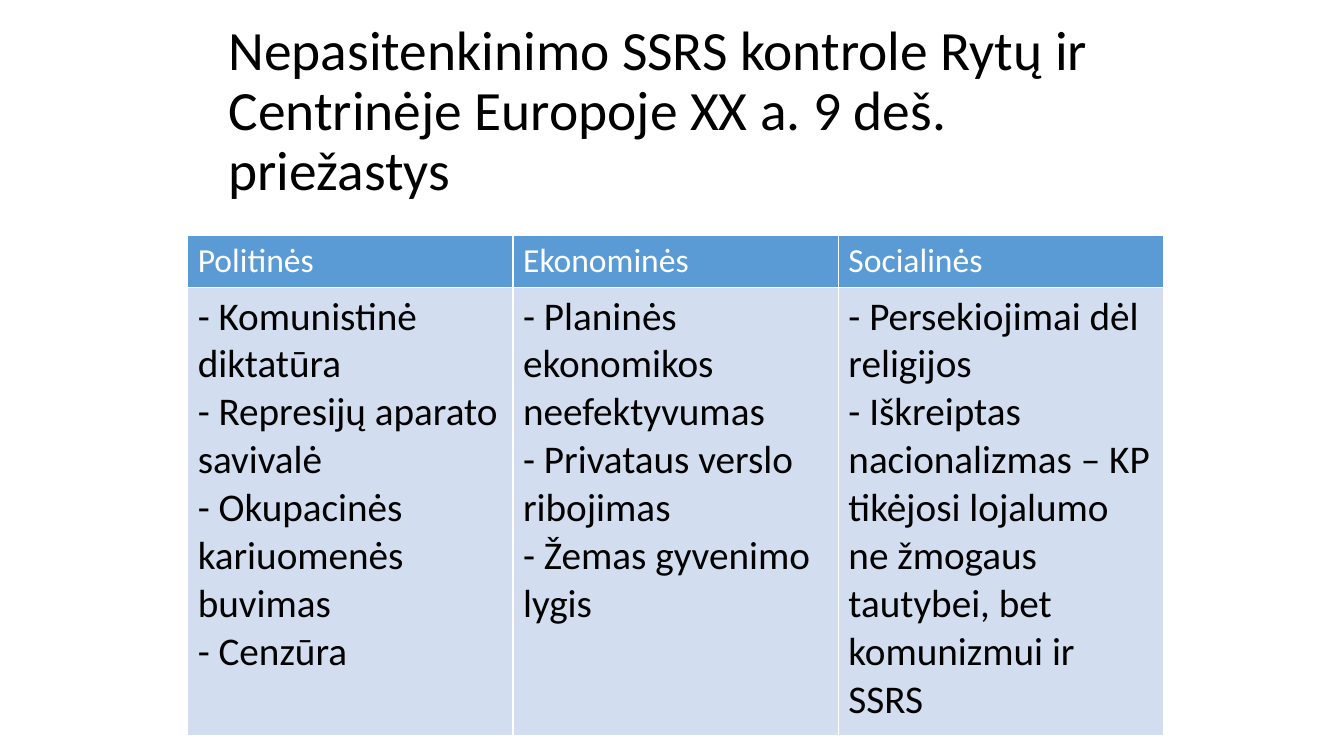
from lxml.etree import SubElement
from pptx import Presentation
from pptx.dml.color import RGBColor
from pptx.enum.text import MSO_ANCHOR, PP_ALIGN
from pptx.oxml.ns import qn
from pptx.util import Cm, Pt

FONT = "Calibri"
BLACK, WHITE = "000000", "FFFFFF"
HEADER_BLUE, BODY_BLUE = "5B9BD5", "D2DEEF"
HEADING = "Nepasitenkinimo SSRS kontrole Rytų ir Centrinėje Europoje XX a. 9 deš. priežastys"
CAUSES = {
    "Politinės": [
        "- Komunistinė diktatūra",
        "- Represijų aparato savivalė",
        "- Okupacinės kariuomenės buvimas",
        "- Cenzūra",
    ],
    "Ekonominės": [
        "- Planinės ekonomikos neefektyvumas",
        "- Privataus verslo ribojimas",
        "- Žemas gyvenimo lygis",
    ],
    "Socialinės": [
        "- Persekiojimai dėl religijos",
        "- Iškreiptas nacionalizmas – KP tikėjosi lojalumo ne žmogaus tautybei, bet komunizmui ir SSRS",
    ],
}


def paint(color_format, color):
    """Apply a hex colour to a colour format."""
    color_format.rgb = RGBColor.from_string(color)


def write_lines(frame, lines, size, color, spacing=1.0):
    """Write each line as a left-aligned paragraph with one run."""
    for index, line in enumerate(lines):
        paragraph = frame.paragraphs[0] if index == 0 else frame.add_paragraph()
        paragraph.alignment = PP_ALIGN.LEFT
        paragraph.line_spacing = spacing
        run = paragraph.add_run()
        run.text = line
        run.font.name = FONT
        run.font.size = Pt(size)
        run.font.bold = False
        paint(run.font.color, color)


def add_heading(slide):
    """Place the slide heading above the table."""
    heading = slide.shapes.add_textbox(Cm(5.51), Cm(0.76), Cm(22.86), Cm(4.17))
    frame = heading.text_frame
    frame.word_wrap = True
    frame.vertical_anchor = MSO_ANCHOR.MIDDLE
    write_lines(frame, [HEADING], 39.6, BLACK, 0.9)


def add_borders(cell):
    """Draw thin white lines on all four sides of a cell."""
    properties = cell._tc.get_or_add_tcPr()
    for side in ("a:lnL", "a:lnR", "a:lnT", "a:lnB"):
        border = SubElement(properties, qn(side), w=str(Pt(1)))
        line_fill = SubElement(border, qn("a:solidFill"))
        SubElement(line_fill, qn("a:srgbClr"), val=WHITE)


def fill_cell(cell, lines, size, text_color, background):
    """Give a cell its borders, background and text."""
    add_borders(cell)
    cell.fill.solid()
    paint(cell.fill.fore_color, background)
    write_lines(cell.text_frame, lines, size, text_color)


def add_causes(slide):
    """Build the table with one column for each group of causes."""
    frame = slide.shapes.add_table(2, len(CAUSES), Cm(4.73), Cm(5.93), Cm(24.6), Cm(12.6))
    causes = frame.table
    causes.rows[0].height = Cm(1.32)
    causes.rows[1].height = Cm(11.28)
    for column, (group, reasons) in enumerate(CAUSES.items()):
        causes.columns[column].width = Cm(8.2)
        fill_cell(causes.cell(0, column), [group], 24, WHITE, HEADER_BLUE)
        fill_cell(causes.cell(1, column), reasons, 28, BLACK, BODY_BLUE)


def main():
    """Create the slide and save it."""
    deck = Presentation()
    deck.slide_width = Cm(33.87)
    deck.slide_height = Cm(19.05)
    slide = deck.slides.add_slide(deck.slide_layouts[6])
    add_heading(slide)
    add_causes(slide)
    deck.save("out.pptx")


if __name__ == "__main__":
    main()
